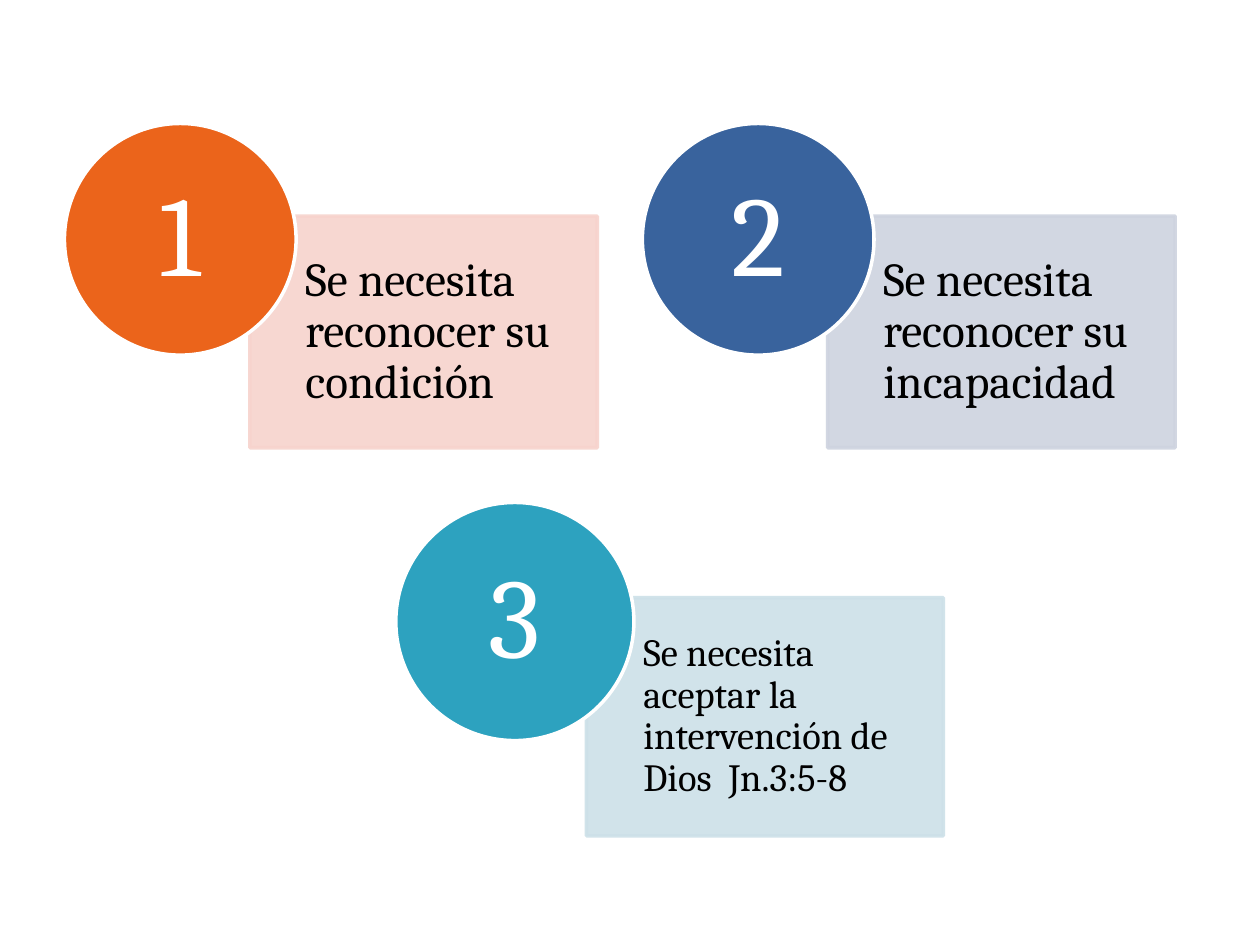
from lxml.etree import SubElement
from pptx import Presentation
from pptx.dml.color import RGBColor
from pptx.enum.shapes import MSO_SHAPE as Shape
from pptx.enum.text import MSO_ANCHOR as Anchor, PP_ALIGN as Align
from pptx.oxml.ns import qn
from pptx.util import Cm, Pt

FONT = "Cambria"
# left, top, circle diameter (cm), number, text, text size, inset (cm), circle colour, card colour
STEPS = [
    (1.3, 2.49, 4.67, "1", "Se necesita reconocer su condición", 27, 0.53, "EB641B", "F7D3CD"),
    (12.95, 2.49, 4.67, "2", "Se necesita reconocer su incapacidad", 27, 0.53, "39639D", "CED3DF"),
    (7.98, 10.13, 4.8, "3", "Se necesita aceptar la intervención de Dios  Jn.3:5-8", 22, 0.43,
     "2DA2BF", "CDE0E8"),
]


def color(value):
    return RGBColor.from_string(value)


def set_opacity(shape, percent):
    """Make both the fill and the outline partly transparent."""
    for clr in shape._element.spPr.iter(qn("a:srgbClr")):
        SubElement(clr, qn("a:alpha"), val=str(percent * 1000))


def add_block(page, kind, box, fill, line):
    shape = page.shapes.add_shape(kind, *(Cm(length) for length in box))
    shape.shadow.inherit = False
    shape.fill.solid()
    shape.fill.fore_color.rgb = color(fill)
    shape.line.color.rgb = color(line)
    shape.line.width = Pt(2)
    return shape


def write(shape, text, size, text_color, align, insets):
    frame = shape.text_frame
    frame.word_wrap = True
    frame.vertical_anchor = Anchor.MIDDLE
    (frame.margin_left, frame.margin_top,
     frame.margin_right, frame.margin_bottom) = (Cm(inset) for inset in insets)
    frame.text = text
    para = frame.paragraphs[0]
    para.alignment = align
    para.line_spacing = 0.9
    para.font.name = FONT
    para.font.size = Pt(size)
    para.font.color.rgb = color(text_color)


def add_step(page, left, top, diameter, number, text, size, inset, circle_color, card_color):
    """Place a text card with a numbered circle over its upper left corner."""
    card_box = (left + 0.8 * diameter, top + 0.4 * diameter, 1.5 * diameter, diameter)
    card = add_block(page, Shape.RECTANGLE, card_box, card_color, card_color)
    set_opacity(card, 90)
    write(card, text, size, "000000", Align.LEFT, (0.24 * diameter, inset, inset, inset))

    circle_box = (left, top, diameter, diameter)
    circle = add_block(page, Shape.OVAL, circle_box, circle_color, "FFFFFF")
    write(circle, number, 65, "FFFFFF", Align.CENTER, (0, 0, 0, 0))


def main():
    deck = Presentation()
    deck.slide_width, deck.slide_height = Cm(25.4), Cm(19.05)
    page = deck.slides.add_slide(deck.slide_layouts[6])
    for step in STEPS:
        add_step(page, *step)
    deck.save("out.pptx")


if __name__ == "__main__":
    main()
